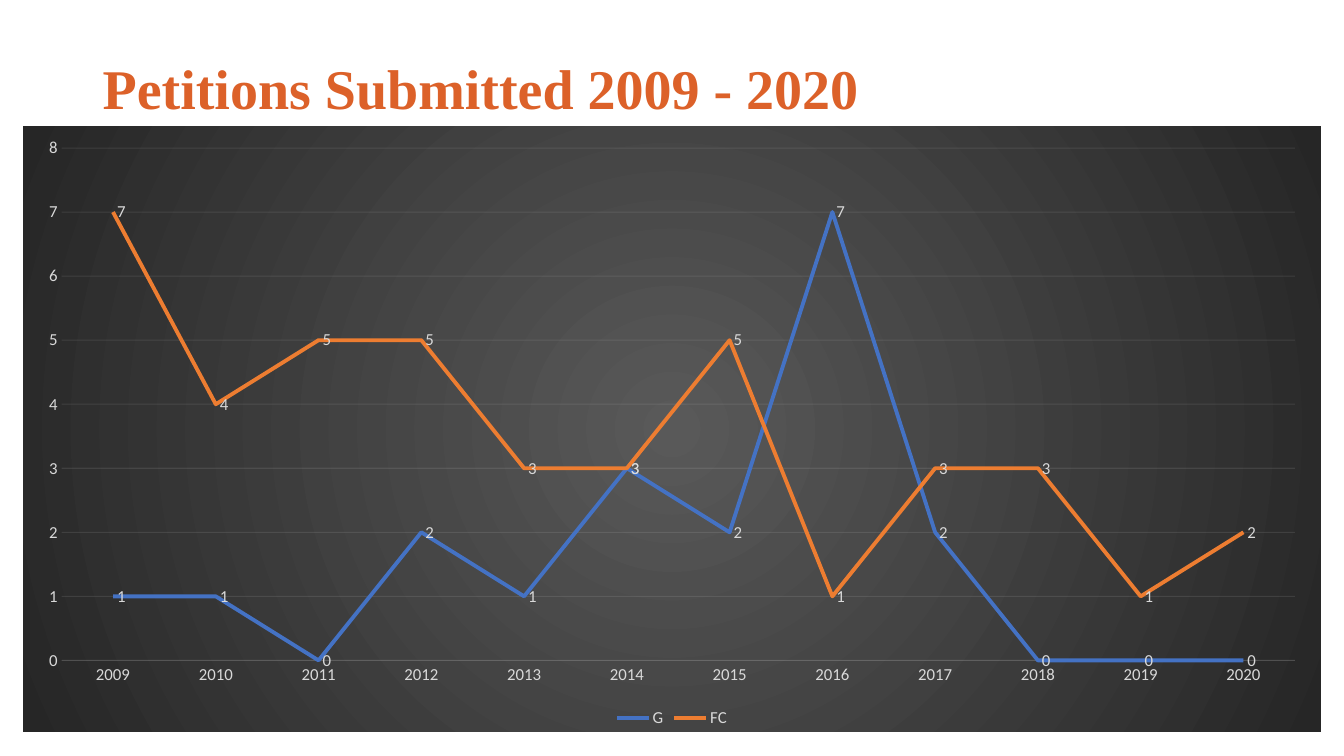
from dataclasses import dataclass

from lxml.etree import SubElement
from pptx import Presentation
from pptx.chart.data import CategoryChartData
from pptx.dml.color import RGBColor
from pptx.enum.chart import XL_CHART_TYPE, XL_LABEL_POSITION, XL_LEGEND_POSITION, XL_TICK_MARK
from pptx.enum.text import MSO_ANCHOR
from pptx.oxml import parse_xml
from pptx.oxml.ns import nsdecls, qn
from pptx.util import Inches, Pt


@dataclass(frozen=True)
class Theme:
    title_font: str = "Times New Roman"
    chart_font: str = "Calibri"
    title_size: int = 40
    label_size: int = 12
    series_width: float = 2.75
    grid_width: float = 0.75
    grid_opacity: int = 10
    title_color: str = "DC6129"
    label_color: str = "D9D9D9"
    grid_color: str = "F2F2F2"
    center_color: str = "595959"
    edge_color: str = "262626"
    series_colors: tuple = ("4472C4", "ED7D31")


YEARS = [str(year) for year in range(2009, 2021)]
PETITIONS = {
    "G": (1, 1, 0, 2, 1, 3, 2, 7, 2, 0, 0, 0),
    "FC": (7, 4, 5, 5, 3, 3, 5, 1, 3, 3, 1, 2),
}


class SlideBuilder:
    def __init__(self, page, theme):
        self.page = page
        self.theme = theme

    def add_title(self, text, left, top, width, height):
        box = self.page.shapes.add_textbox(*map(Inches, (left, top, width, height)))
        frame = box.text_frame
        frame.word_wrap = True
        frame.vertical_anchor = MSO_ANCHOR.BOTTOM
        frame.text = text
        para = frame.paragraphs[0]
        para.line_spacing = 0.9
        self.style_font(para.runs[0].font, self.theme.title_size,
                        self.theme.title_color, self.theme.title_font)
        para.runs[0].font.bold = True

    def add_line_chart(self, categories, series_values, left, top, width, height):
        data = CategoryChartData()
        data.categories = categories
        for name, values in series_values.items():
            data.add_series(name, values)
        chart = self.page.shapes.add_chart(
            XL_CHART_TYPE.LINE, *map(Inches, (left, top, width, height)), data).chart
        chart.has_title = False
        self.style_label(chart.font)
        self.fill_background(chart)
        self.style_axes(chart)
        self.style_series(chart.plots[0])
        chart.has_legend = True
        chart.legend.position = XL_LEGEND_POSITION.BOTTOM
        chart.legend.include_in_layout = False
        self.style_label(chart.legend.font)

    def style_axes(self, chart):
        values, years = chart.value_axis, chart.category_axis
        for axis in (values, years):
            axis.major_tick_mark = axis.minor_tick_mark = XL_TICK_MARK.NONE
            self.style_label(axis.tick_labels.font)
        values.minimum_scale, values.maximum_scale, values.major_unit = 0, 8, 1
        values.has_major_gridlines = True
        values.format.line.fill.background()
        for line in (values.major_gridlines.format.line, years.format.line):
            self.style_line(line, self.theme.grid_color, self.theme.grid_width)
        for color in chart.element.xpath(
                ".//c:majorGridlines//a:srgbClr | .//c:catAx/c:spPr//a:srgbClr"):
            SubElement(color, qn("a:alpha"), val=str(self.theme.grid_opacity * 1000))

    def style_series(self, plot):
        plot.vary_by_categories = False
        for series, color in zip(plot.series, self.theme.series_colors):
            series.smooth = False
            self.style_line(series.format.line, color, self.theme.series_width)
            labels = series.data_labels
            labels.show_value = True
            labels.position = XL_LABEL_POSITION.RIGHT
            self.style_label(labels.font)

    def fill_background(self, chart):
        """Give the chart area a circular gradient, which needs XML."""
        fill = parse_xml(
            f'<c:spPr {nsdecls("c", "a")}><a:gradFill><a:gsLst>'
            f'<a:gs pos="0"><a:srgbClr val="{self.theme.center_color}"/></a:gs>'
            f'<a:gs pos="100000"><a:srgbClr val="{self.theme.edge_color}"/></a:gs>'
            '</a:gsLst><a:path path="circle">'
            '<a:fillToRect l="50000" t="50000" r="50000" b="50000"/>'
            '</a:path></a:gradFill><a:ln><a:noFill/></a:ln></c:spPr>')
        chart.element.find(qn("c:chart")).addnext(fill)

    def style_label(self, font):
        self.style_font(font, self.theme.label_size,
                        self.theme.label_color, self.theme.chart_font)

    @staticmethod
    def style_font(font, size, color, name):
        font.size = Pt(size)
        font.name = name
        font.color.rgb = RGBColor.from_string(color)

    @staticmethod
    def style_line(line, color, width):
        line.color.rgb = RGBColor.from_string(color)
        line.width = Pt(width)


def main():
    deck = Presentation()
    deck.slide_width, deck.slide_height = Inches(13.33), Inches(7.5)
    page = deck.slides.add_slide(deck.slide_layouts[6])
    builder = SlideBuilder(page, Theme())
    builder.add_title("Petitions Submitted 2009 - 2020", 0.92, 0.27, 9.51, 0.99)
    builder.add_line_chart(YEARS, PETITIONS, 0.23, 1.25, 12.87, 6.01)
    deck.save("out.pptx")


if __name__ == "__main__":
    main()
